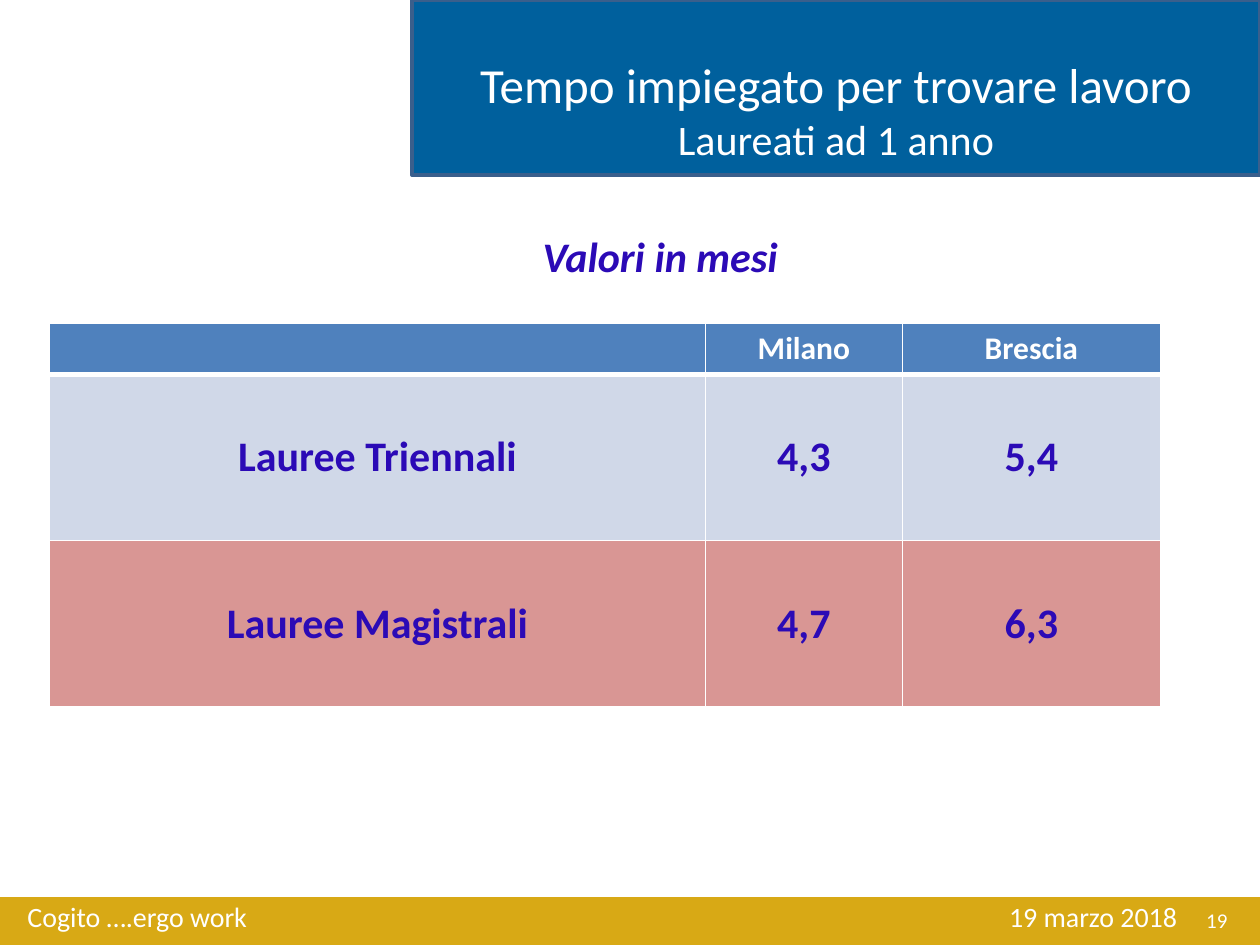
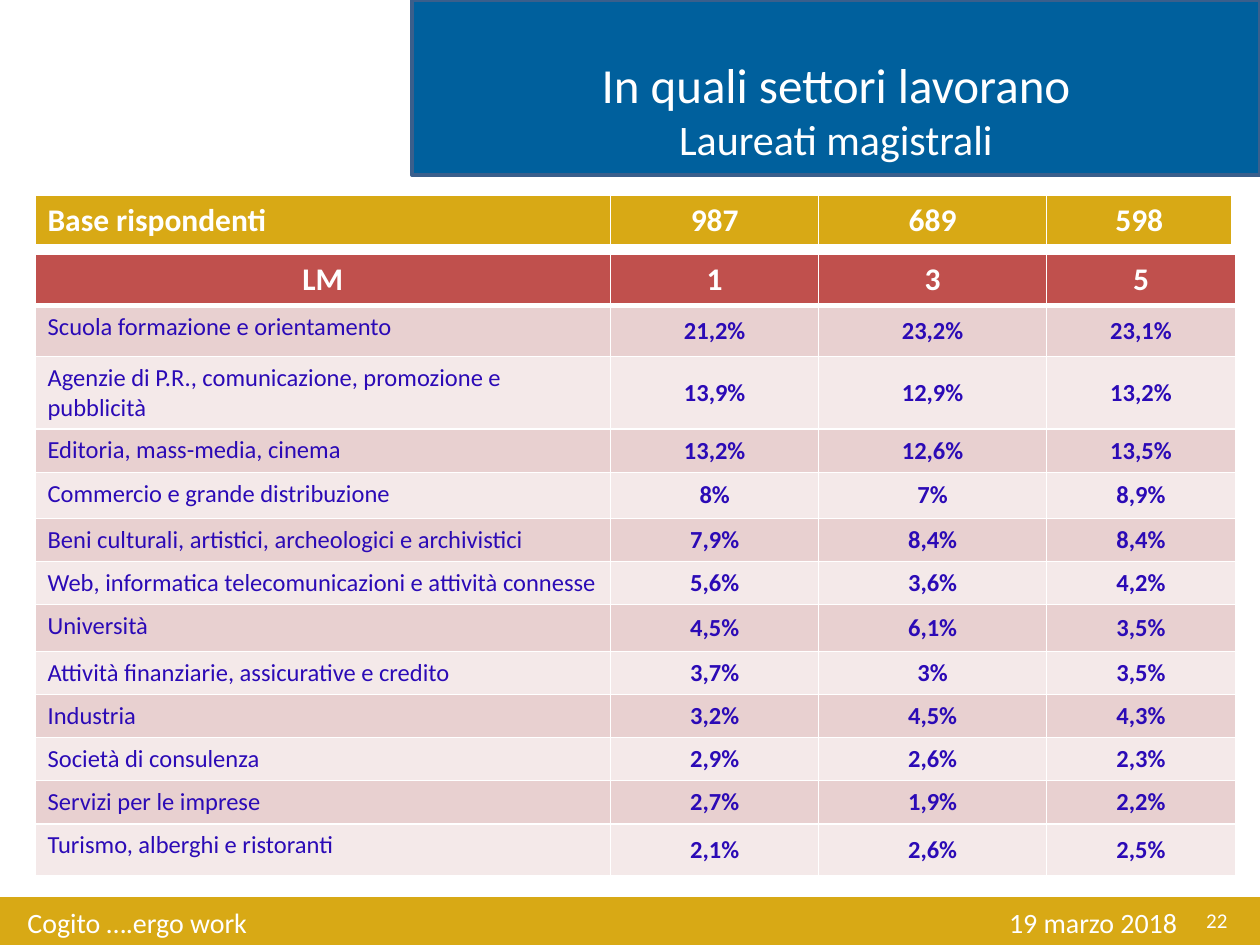
from dataclasses import dataclass

from lxml import etree
from pptx import Presentation
from pptx.dml.color import RGBColor
from pptx.enum.shapes import MSO_SHAPE
from pptx.enum.text import MSO_ANCHOR, PP_ALIGN
from pptx.oxml.ns import qn
from pptx.util import Pt

RECTANGLE = MSO_SHAPE.RECTANGLE
TOP, MIDDLE = MSO_ANCHOR.TOP, MSO_ANCHOR.MIDDLE
LEFT, CENTER, RIGHT = PP_ALIGN.LEFT, PP_ALIGN.CENTER, PP_ALIGN.RIGHT


@dataclass(frozen=True)
class Theme:
    """Colours, font and type sizes shared by the deck."""

    font: str = "Calibri"
    white: str = "FFFFFF"
    gold: str = "D8A915"
    navy: str = "00609D"
    navy_edge: str = "3A5F8C"
    ink: str = "2B0AB6"
    blue: str = "4F81BD"
    pale_blue: str = "D0D8E8"
    salmon: str = "D99694"
    red: str = "C0504D"
    rose: str = "E8D0D0"
    pale_rose: str = "F4E9E9"
    title: int = 28
    large: int = 24
    heading: int = 18
    footer: int = 16
    body: int = 14
    number: int = 12


THEME = Theme()
PAGE_SIZE = (720, 540)
TITLE_BOX = (235.4, 0, 484.6, 100)
FOOTER_BOX = (0, 512.6, 720, 27.4)
CAPTION_BOX = (303, 128, 150, 36)
MONTHS_BOX = (28.2, 184.8, 635, 219.2)
BASE_BOX = (20, 111.6, 684, 29.2)
SECTORS_BOX = (20, 145.4, 686, 355)
SECTOR_COLUMNS = (329, 118.8, 130.3)

MONTHS = [
    ("", "Milano", "Brescia"),
    ("Lauree Triennali", "4,3", "5,4"),
    ("Lauree Magistrali", "4,7", "6,3"),
]
RESPONDENTS = ("Base rispondenti", "987", "689", "598")
SECTORS = [
    ("LM", "1", "3", "5"),
    ("Scuola formazione e orientamento", "21,2%", "23,2%", "23,1%"),
    ("Agenzie di P.R., comunicazione, promozione e pubblicità", "13,9%", "12,9%", "13,2%"),
    ("Editoria, mass-media, cinema", "13,2%", "12,6%", "13,5%"),
    ("Commercio e grande distribuzione", "8%", "7%", "8,9%"),
    ("Beni culturali, artistici, archeologici e archivistici", "7,9%", "8,4%", "8,4%"),
    ("Web, informatica telecomunicazioni e attività connesse", "5,6%", "3,6%", "4,2%"),
    ("Università", "4,5%", "6,1%", "3,5%"),
    ("Attività finanziarie, assicurative e credito", "3,7%", "3%", "3,5%"),
    ("Industria", "3,2%", "4,5%", "4,3%"),
    ("Società di consulenza", "2,9%", "2,6%", "2,3%"),
    ("Servizi per le imprese", "2,7%", "1,9%", "2,2%"),
    ("Turismo, alberghi e ristoranti", "2,1%", "2,6%", "2,5%"),
]
SECTOR_ROWS = (29.2, 29.2, 41.4, 24.8, 26.4, 24.6, 24.6, 26.8, 24.6, 24.6, 24.6, 25, 29.2)


def write(para, text, *, size, color=THEME.white, bold=False, italic=False, align=LEFT):
    """Write text into a paragraph with its format."""
    para.alignment = align
    span = para.add_run()
    span.text = text
    font = span.font
    font.name, font.size = THEME.font, Pt(size)
    font.bold, font.italic = bold, italic
    font.color.rgb = RGBColor.from_string(color)


def add_text_frame(page, left, top, width, height, wrap=True, anchor=TOP):
    """Add a text box and return its text frame."""
    frame = page.shapes.add_textbox(Pt(left), Pt(top), Pt(width), Pt(height)).text_frame
    frame.word_wrap = wrap
    frame.vertical_anchor = anchor
    return frame


def add_band(page, box, fill, edge=None):
    """Add a flat rectangle, with an outline when an edge colour is given."""
    band = page.shapes.add_shape(RECTANGLE, *map(Pt, box))
    band.shadow.inherit = False
    band.fill.solid()
    band.fill.fore_color.rgb = RGBColor.from_string(fill)
    if edge:
        band.line.color.rgb = RGBColor.from_string(edge)
        band.line.width = Pt(2)
    else:
        band.line.fill.background()


def add_title(page, box, title, subtitle):
    """Place the title band with its two centred lines."""
    left, top, width, _ = box
    add_band(page, box, THEME.navy, THEME.navy_edge)
    frame = add_text_frame(page, left, top + 27.4, width, 65)
    write(frame.paragraphs[0], title, size=THEME.title, align=CENTER)
    write(frame.add_paragraph(), subtitle, size=THEME.large, align=CENTER)


def add_footer(page, box, number, text_drop):
    """Place the footer band, its tabbed line of text and the page number."""
    left, top, width, height = box
    add_band(page, box, THEME.gold)
    frame = add_text_frame(page, left + 8.6, top + text_drop, width - 45, 31.7)
    para = frame.paragraphs[0]
    tabs = etree.SubElement(para._p.get_or_add_pPr(), qn("a:tabLst"))
    etree.SubElement(tabs, qn("a:tab"), pos=str(Pt(657)), algn="r")
    write(para, "Cogito ….ergo work\t19 marzo 2018", size=THEME.footer)
    frame = add_text_frame(page, left + width - 179.3, top - 1.4, 167.8, height + 1.4, anchor=MIDDLE)
    write(frame.paragraphs[0], str(number), size=THEME.number, align=RIGHT)


def style_cell(cell, fill, top_edge=1, bottom_edge=1):
    """Fill a cell and give it white borders."""
    cell.fill.solid()
    cell.fill.fore_color.rgb = RGBColor.from_string(fill)
    properties = cell._tc.get_or_add_tcPr()
    edges = {"lnL": 1, "lnR": 1, "lnT": top_edge, "lnB": bottom_edge}
    for index, (side, weight) in enumerate(edges.items()):
        line = etree.Element(qn(f"a:{side}"), w=str(Pt(weight)))
        solid = etree.SubElement(line, qn("a:solidFill"))
        etree.SubElement(solid, qn("a:srgbClr"), val=THEME.white)
        properties.insert(index, line)


def add_grid(page, box, rows, columns, heights, fills, label, value, label_anchor=TOP, head_align=CENTER):
    """Place a table with a heading row, then labels and values in body rows."""
    left, top, width, height = box
    frame = page.shapes.add_table(len(rows), len(rows[0]), Pt(left), Pt(top), Pt(width), Pt(height))
    table = frame.table
    table.horz_banding = False
    for column, size in zip(table.columns, (*columns, width - sum(columns))):
        column.width = Pt(size)
    for row, size in zip(table.rows, heights):
        row.height = Pt(size)
    heading = dict(size=THEME.heading, bold=True, align=CENTER)
    for y, (texts, fill) in enumerate(zip(rows, fills)):
        for x, text in enumerate(texts):
            cell = table.cell(y, x)
            style_cell(cell, fill, 3 if y == 1 else 1, 3 if y == 0 else 1)
            if y:
                cell.vertical_anchor = MIDDLE if x else label_anchor
                style = value if x else label
            else:
                style = heading if x else heading | {"align": head_align}
            if text:
                write(cell.text_frame.paragraphs[0], text, **style)


def add_page(deck, title, subtitle, number, text_drop):
    """Add a blank page with the shared title and footer."""
    page = deck.slides.add_slide(deck.slide_layouts[6])
    add_title(page, TITLE_BOX, title, subtitle)
    add_footer(page, FOOTER_BOX, number, text_drop)
    return page


def build_months_page(deck):
    """Build the page on the time needed to find a job."""
    page = add_page(deck, "Tempo impiegato per trovare lavoro", "Laureati ad 1 anno", 19, -2.1)
    caption = add_text_frame(page, *CAPTION_BOX, wrap=False)
    write(caption.paragraphs[0], "Valori in mesi", size=THEME.large, color=THEME.ink, bold=True, italic=True)
    style = dict(size=THEME.large, color=THEME.ink, bold=True, align=CENTER)
    fills = (THEME.blue, THEME.pale_blue, THEME.salmon)
    add_grid(page, MONTHS_BOX, MONTHS, (375, 112.4), (29.2, 95, 95), fills, style, style, label_anchor=MIDDLE)


def build_sectors_page(deck):
    """Build the page on the sectors graduates work in."""
    page = add_page(deck, "In quali settori lavorano", "Laureati magistrali", 22, 1.5)
    label = dict(size=THEME.body, color=THEME.ink)
    value = label | {"bold": True, "align": CENTER}
    stripes = [THEME.rose, THEME.pale_rose] * (len(SECTORS) // 2)
    add_grid(page, SECTORS_BOX, SECTORS, SECTOR_COLUMNS, SECTOR_ROWS, [THEME.red, *stripes], label, value)
    add_grid(page, BASE_BOX, [RESPONDENTS], SECTOR_COLUMNS, [29.2], [THEME.gold], label, value, head_align=LEFT)


def main():
    """Build and save the deck."""
    deck = Presentation()
    deck.slide_width, deck.slide_height = map(Pt, PAGE_SIZE)
    build_months_page(deck)
    build_sectors_page(deck)
    deck.save("out.pptx")


if __name__ == "__main__":
    main()
